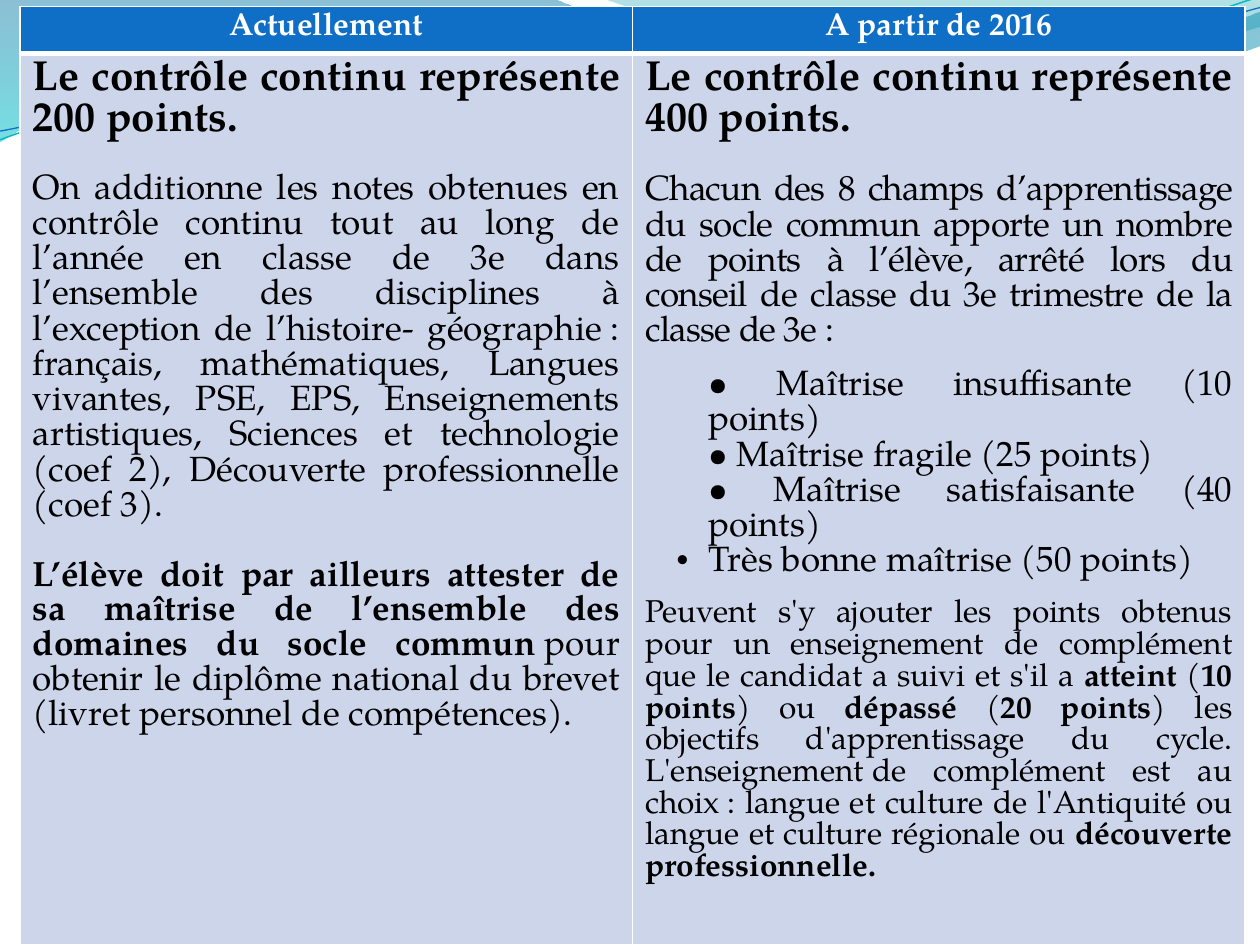
"""Build the slide comparing continuous assessment now and from 2016."""
from lxml.etree import SubElement
from pptx import Presentation
from pptx.dml.color import RGBColor
from pptx.enum.text import PP_ALIGN
from pptx.oxml.ns import qn
from pptx.util import Pt

FONT = "TeX Gyre Pagella"
COLORS = {
    "header": "0F6FC6", "body": "CCD5EA", "white": "FFFFFF", "black": "000000",
    "deep": "0074A1", "aqua": "00C6CF", "teal": "00A1A9", "blue": "008BBF",
    "cyan_line": "0AB8BF", "blue_line": "0F6FC6",
}


def add_text(tf, text, size=20, color="black", align=PP_ALIGN.JUSTIFY,
             before=0, left=0, hanging=0, bullet=None, spacing=0):
    """Add a paragraph; ** marks bold parts and ~ a no-break space."""
    p = tf.paragraphs[0] if not tf.text else tf.add_paragraph()
    p.alignment = align
    p.space_before = Pt(before)
    pPr = p._p.get_or_add_pPr()
    if left:
        pPr.set("marL", str(Pt(left)))
        pPr.set("indent", str(-Pt(hanging)))
    if bullet:
        SubElement(pPr, qn("a:buFont"), typeface="Symbol")
        SubElement(pPr, qn("a:buChar"), char=bullet)
    for i, part in enumerate(text.replace("~", chr(160)).split("**")):
        if not part:
            continue
        r = p.add_run()
        r.text = part
        r.font.name = FONT
        r.font.size = Pt(size)
        r.font.bold = i % 2 == 1
        r.font.color.rgb = RGBColor.from_string(COLORS[color])
        if spacing:
            r.font._element.set("spc", str(round(spacing * 100)))


def add_curve(shapes, start, segments, close):
    """Draw an outline of lines (x, y) and cubic curves (six numbers)."""
    points = [seg[i:i + 2] for seg in segments for i in range(0, len(seg), 2)]
    builder = shapes.build_freeform(Pt(start[0]), Pt(start[1]))
    builder.add_line_segments([(Pt(x), Pt(y)) for x, y in points], close=close)
    sp = builder.convert_to_shape()
    sp.shadow.inherit = False
    steps = iter(list(sp._element.spPr.iter(qn("a:lnTo"))))
    for seg in segments:
        step = next(steps)
        if len(seg) == 6:
            step.tag = qn("a:cubicBezTo")
            for extra in (next(steps), next(steps)):
                step.append(extra[0])
                extra.getparent().remove(extra)
    return sp


prs = Presentation()
prs.slide_width, prs.slide_height = Pt(720), Pt(540)
s = prs.slides.add_slide(prs.slide_layouts[6])

waves = [
    ((0, 0), [
        (316.8, -0.7),
        (342.7, 12.2, 478.1, 45.4, 545.8, 45.4),
        (614.2, 45.4, 689.8, 18.7, 720, 6.5),
        (720.7, 25.9),
        (707.8, 31.7, 626.4, 54.7, 537.1, 54),
        (447.8, 54, 275, 20.2, 185, 24.5),
        (92.9, 25.9, 33.1, 59.8, -0.7, 81.4),
        (0, 0),
    ], [(0, "deep", 45), (1, "aqua", 55)]),
    ((344.9, -0.7), [
        (366.5, 7.9, 491, 44.6, 553.7, 46.8),
        (616.3, 49.7, 691.9, 23, 720, 15.1),
        (720, 0),
        (344.9, -0.7),
    ], [(0, "teal", 30), (0.8, "blue", 45)]),
]
for start, segments, stops in waves:
    sp = add_curve(s.shapes, start, segments, True)
    sp.line.fill.background()
    sp.fill.gradient()
    sp.fill.gradient_angle = 270
    for stop, (position, color, _) in zip(sp.fill.gradient_stops, stops):
        stop.position = position
        stop.color.rgb = RGBColor.from_string(COLORS[color])
    for clr, (_, _, opacity) in zip(sp._element.spPr.iter(qn("a:srgbClr")), stops):
        SubElement(clr, qn("a:alpha"), val=str(opacity * 1000))

wave_lines = [
    ((0, 79.9), [
        (34.6, 67, 113.8, 41, 199.4, 37.4),
        (284.4, 33.8, 427, 64.1, 513.4, 57.6),
        (599.8, 51.1, 675.4, 10.8, 718.6, -1.4),
    ], "cyan_line", 0.85),
    ((0, 74.9), [
        (33.8, 69.1, 118.1, 43.9, 203.8, 40.3),
        (290.2, 36.7, 429.8, 60.5, 516.2, 54),
        (601.9, 48.2, 677.5, 15.1, 720, 4.3),
    ], "blue_line", 0.75),
]
for start, segments, color, width in wave_lines:
    sp = add_curve(s.shapes, start, segments, False)
    sp.fill.background()
    sp.line.color.rgb = RGBColor.from_string(COLORS[color])
    sp.line.width = Pt(width)

item = {"left": 36}
columns = [
    ("Actuellement", [
        ("**Le contrôle continu représente 200 points.**", {"size": 24}),
        ("On additionne les notes obtenues en contrôle continu tout au long de l’année en "
         "classe de 3e dans l’ensemble des disciplines à l’exception de l’histoire- "
         "géographie~: français, mathématiques, Langues vivantes, PSE, EPS, Enseignements "
         "artistiques, Sciences et technologie (coef 2), Découverte professionnelle (coef 3).",
         {"before": 18}),
        ("**L’élève doit par ailleurs attester de sa maîtrise de l’ensemble des domaines du "
         "socle commun**~pour obtenir le diplôme national du brevet (livret personnel de "
         "compétences).", {"before": 20}),
    ]),
    ("A partir de 2016", [
        ("**Le contrôle continu représente 400 points.**", {"size": 24}),
        ("Chacun des 8 champs d’apprentissage du socle commun apporte un nombre de points à "
         "l’élève, arrêté lors du conseil de classe du 3e trimestre de la classe de 3e~:",
         {"before": 19, "spacing": -0.4}),
        ("• Maîtrise insuffisante (10 points)", {"before": 10.5, **item}),
        ("• Maîtrise fragile (25 points)", item),
        ("• Maîtrise satisfaisante (40 points)", item),
        ("Très bonne maîtrise (50 points)", {"hanging": 18, "bullet": "•", **item}),
        ("Peuvent s'y ajouter les points obtenus pour un enseignement de complément que le "
         "candidat a suivi et s'il a **atteint** (**10 points**) ou **dépassé** "
         "(**20 points**) les objectifs d'apprentissage du cycle. L'enseignement~de "
         "complément est au choix~: langue et culture de l'Antiquité ou langue et culture "
         "régionale ou **découverte professionnelle.**", {"size": 18, "before": 10.5}),
    ]),
]
row_heights = (27, 509)
table = s.shapes.add_table(2, 2, Pt(11.5), Pt(3.6), Pt(700), Pt(sum(row_heights))).table
for row, height in zip(table.rows, row_heights):
    row.height = Pt(height)

for col, (title, paragraphs) in enumerate(columns):
    table.columns[col].width = Pt(350)
    header, body = table.cell(0, col), table.cell(1, col)
    add_text(header.text_frame, f"**{title}**", size=18, color="white", align=PP_ALIGN.CENTER)
    for text, options in paragraphs:
        add_text(body.text_frame, text, **options)
    for cell, fill, thick in ((header, "header", "lnB"), (body, "body", None)):
        tcPr = cell._tc.get_or_add_tcPr()
        for side in ("lnL", "lnR", "lnT", "lnB"):
            if cell is body and side == "lnT":
                continue
            ln = SubElement(tcPr, qn(f"a:{side}"), w=str(Pt(3 if side == thick else 1)))
            SubElement(SubElement(ln, qn("a:solidFill")), qn("a:srgbClr"), val=COLORS["white"])
        cell.fill.solid()
        cell.fill.fore_color.rgb = RGBColor.from_string(COLORS[fill])

prs.save("out.pptx")
